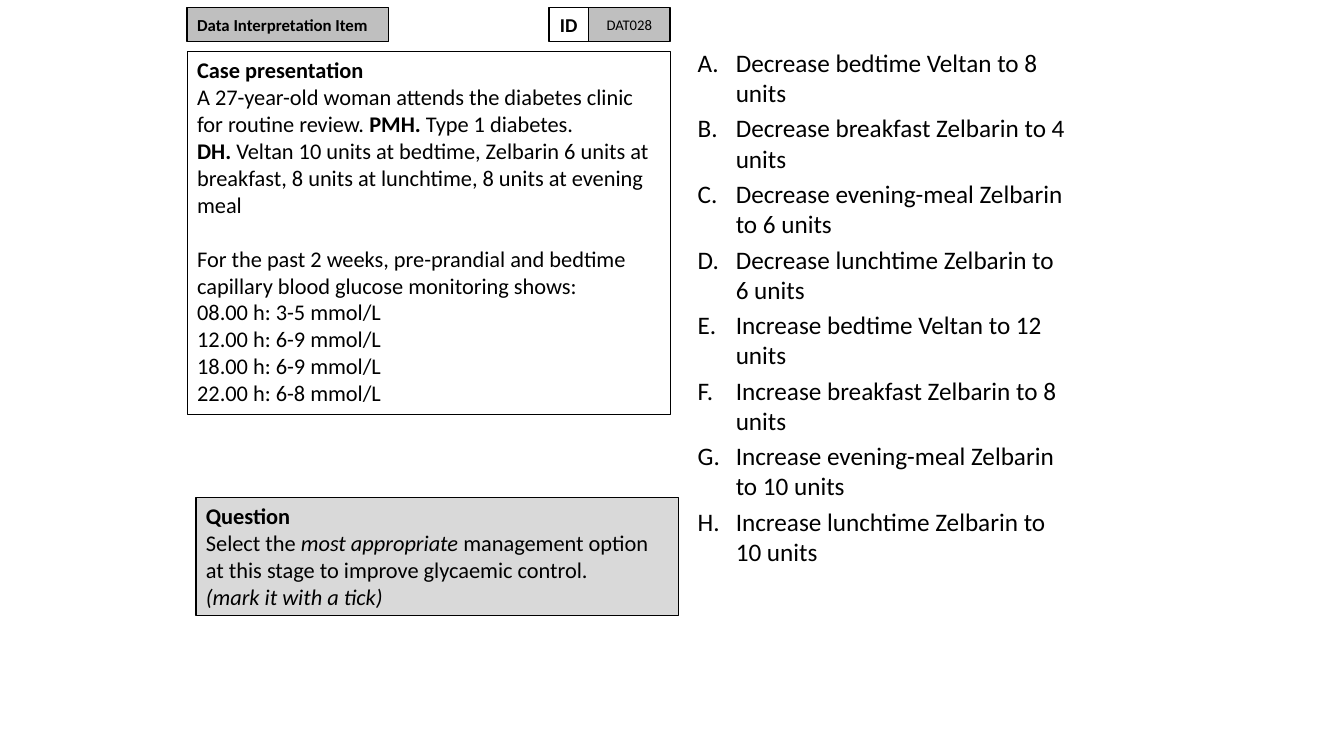
from pptx import Presentation
from pptx.dml.color import RGBColor as Rgb
from pptx.enum.shapes import MSO_SHAPE as Kind
from pptx.enum.text import MSO_ANCHOR as Anchor, PP_ALIGN as Align
from pptx.oxml.ns import qn
from pptx.util import Pt
from lxml.etree import SubElement as Sub

THEME = {
    "font": "Calibri", "ink": "000000", "tag": "BFBFBF", "ask": "D9D9D9",
    "label": 12, "code": 10.5, "id": 14, "body": 16, "list": 18,
    "thick": 1, "thin": 0.75, "gap": 19.5, "lead": 3.6, "hang": 27.25,
}

CASE = [
    [("Case presentation", "b")],
    [("A 27-year-old woman attends the diabetes clinic for routine review. ", ""),
     ("PMH.", "b"), (" Type 1 diabetes.", ""), ("\n", ""), ("DH.", "b"),
     (" Veltan 10 units at bedtime, Zelbarin 6 units at breakfast, "
      "8 units at lunchtime, 8 units at evening meal", "")],
    [("For the past 2 weeks, pre-prandial and bedtime capillary blood "
      "glucose monitoring shows:", "")],
    [("08.00 h: 3-5 mmol/L", "")],
    [("12.00 h: 6-9 mmol/L", "")],
    [("18.00 h: 6-9 mmol/L", "")],
    [("22.00 h: 6-8 mmol/L", "")],
]
ASK = [
    [("Question", "b")],
    [("Select the ", ""), ("most appropriate", "i"),
     (" management option at this stage to improve glycaemic control.", ""),
     ("\n", ""), ("(mark it with a tick)", "i")],
]
CHOICES = [
    "Decrease bedtime Veltan to 8 units",
    "Decrease breakfast Zelbarin to 4 units",
    "Decrease evening-meal Zelbarin to 6 units",
    "Decrease lunchtime Zelbarin to 6 units",
    "Increase bedtime Veltan to 12 units",
    "Increase breakfast Zelbarin to 8 units",
    "Increase evening-meal Zelbarin to 10 units",
    "Increase lunchtime Zelbarin to 10 units",
]

LEFT, TOP, WIDE, HIGH = 133.75, 5.4, 345, 24.5
RIGHT = LEFT + WIDE
CODE, MARK = 58.5, 28
MID, LOW = Anchor.MIDDLE, Anchor.TOP
BOXES = [
    ((LEFT, TOP, 144, HIGH), "tag", "thick", "label", MID, Align.LEFT,
     [[("Data Interpretation Item", "b")]]),
    ((RIGHT - CODE, TOP, CODE, HIGH), "tag", "thick", "code", MID, Align.CENTER,
     [[("DAT028", "")]]),
    ((RIGHT - CODE - MARK, TOP, MARK, HIGH), None, "thick", "id", MID, Align.CENTER,
     [[("ID", "b")]]),
    ((LEFT, 36.75, WIDE, 259.25), None, "thin", "body", LOW, Align.LEFT, CASE),
    ((LEFT + 6.25, 355.25, WIDE, 84.5), "ask", "thin", "body", LOW, Align.LEFT, ASK),
]


def style(para, size):
    font = para.font
    font.name = THEME["font"]
    font.size = Pt(THEME[size])
    font.color.rgb = Rgb.from_string(THEME["ink"])


def write(para, runs):
    marks = {mark for _, mark in runs}
    if marks == {"b"}:
        para.font.bold = True
    for text, mark in runs:
        if text == "\n":
            para.add_line_break()
            continue
        run = para.add_run()
        run.text = text
        if len(marks) > 1 and mark:
            run.font.bold = mark == "b"
            run.font.italic = mark == "i"


def paras(frame, count):
    frame.word_wrap = True
    for _ in range(count - 1):
        frame.add_paragraph()
    return frame.paragraphs


def draw(slide, place, fill, line, size, anchor, align, rows):
    box = slide.shapes.add_shape(Kind.RECTANGLE, *map(Pt, place))
    box.shadow.inherit = False
    if fill:
        box.fill.solid()
        box.fill.fore_color.rgb = Rgb.from_string(THEME[fill])
    else:
        box.fill.background()
    box.line.color.rgb = Rgb.from_string(THEME["ink"])
    box.line.width = Pt(THEME[line])
    box.text_frame.vertical_anchor = anchor
    for para, runs in zip(paras(box.text_frame, len(rows)), rows):
        style(para, size)
        para.alignment = align
        write(para, runs)
    return box


def choose(slide):
    box = slide.shapes.add_textbox(*map(Pt, (491.25, 30.25, 278, 452)))
    for para, text in zip(paras(box.text_frame, len(CHOICES)), CHOICES):
        para.space_before = Pt(THEME["lead"])
        props = para._p.get_or_add_pPr()
        props.set("marL", str(Pt(THEME["hang"])))
        props.set("indent", str(-Pt(THEME["hang"])))
        Sub(props, qn("a:buAutoNum"), type="alphaUcPeriod")
        style(para, "list")
        write(para, [(text, "")])


def main():
    deck = Presentation()
    deck.slide_width, deck.slide_height = Pt(960), Pt(540)
    slide = deck.slides.add_slide(deck.slide_layouts[6])
    choose(slide)
    for row in BOXES:
        box = draw(slide, *row)
        if row[-1] is CASE:
            box.text_frame.paragraphs[2].space_before = Pt(THEME["gap"])
    deck.save("out.pptx")


if __name__ == "__main__":
    main()
